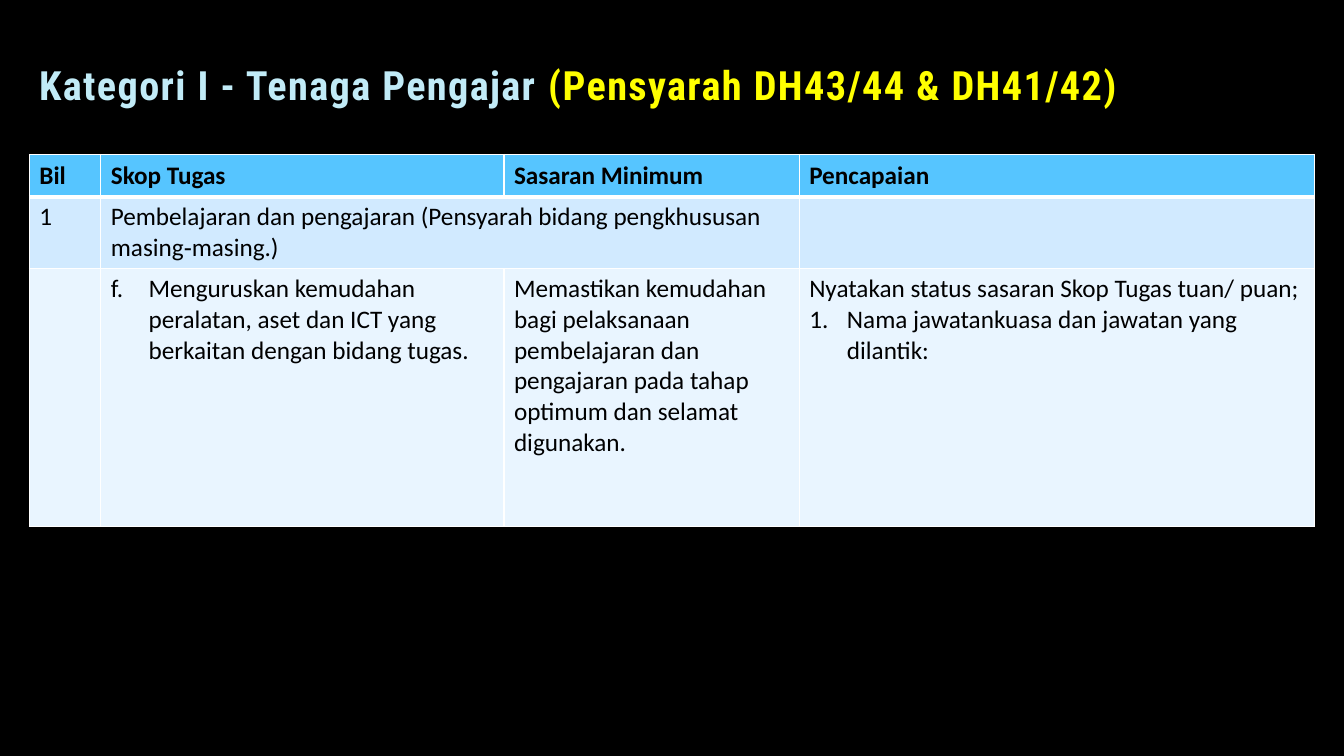
import dataclasses

import lxml.etree
import pptx
import pptx.dml.color
import pptx.enum.text
import pptx.oxml.ns
import pptx.util

Cm = pptx.util.Cm
Pt = pptx.util.Pt
qn = pptx.oxml.ns.qn
Anchor = pptx.enum.text.MSO_ANCHOR

WIDTHS = (1.8, 10.16, 7.44, 12.98)
HEIGHTS = (1.07, 1.78, 6.5)
FILLS = ("56C5FF", "D1EAFF", "E9F5FF")
INDENT = Cm(0.95)


@dataclasses.dataclass
class Line:
    text: str
    scheme: str = ""
    start: int = 1


ROWS = (
    ([Line("Bil")], [Line("Skop Tugas")], [Line("Sasaran Minimum")], [Line("Pencapaian")]),
    (
        [Line("1")],
        [Line("Pembelajaran dan pengajaran (Pensyarah bidang pengkhususan masing‐masing.)")],
        [],
        [],
    ),
    (
        [],
        [Line("Menguruskan kemudahan peralatan, aset dan ICT yang berkaitan dengan bidang tugas.",
              "alphaLcPeriod", 6)],
        [Line("Memastikan kemudahan bagi pelaksanaan pembelajaran dan pengajaran "
              "pada tahap optimum dan selamat digunakan.")],
        [Line("Nyatakan status sasaran Skop Tugas tuan/ puan;"),
         Line("Nama jawatankuasa dan jawatan yang dilantik:", "arabicPeriod")],
    ),
)


def color(code: str) -> pptx.dml.color.RGBColor:
    return pptx.dml.color.RGBColor.from_string(code)


def style(font, name: str, size: float, code: str, bold: bool) -> None:
    font.name = name
    font.size = Pt(size)
    font.bold = bold
    font.color.rgb = color(code)


def number(para, line: Line) -> None:
    """Give the paragraph a hanging automatic number."""
    props = para._p.get_or_add_pPr()
    props.set("marL", str(INDENT))
    props.set("indent", str(-INDENT))
    mark = lxml.etree.SubElement(props, qn("a:buAutoNum"), type=line.scheme)
    if line.start > 1:
        mark.set("startAt", str(line.start))


def border(cell, row: int) -> None:
    """Draw white cell edges, thick between the header and the body."""
    props = cell._tc.get_or_add_tcPr()
    thick = {(0, "lnB"), (1, "lnT")}
    for side in ("lnL", "lnR", "lnT", "lnB"):
        width = Pt(3 if (row, side) in thick else 1)
        edge = lxml.etree.SubElement(props, qn("a:" + side), w=str(width))
        fill = lxml.etree.SubElement(edge, qn("a:solidFill"))
        lxml.etree.SubElement(fill, qn("a:srgbClr"), val="FFFFFF")


def write(cell, lines: list[Line], bold: bool) -> None:
    frame = cell.text_frame
    frame.text = "\n".join(line.text for line in lines)
    for para, line in zip(frame.paragraphs, lines):
        if line.scheme:
            number(para, line)
        for run in para.runs:
            style(run.font, "Calibri", 18, "000000", bold)


def heading(slide) -> None:
    box = slide.shapes.add_textbox(Cm(0.74), Cm(1.19), Cm(28.88), Cm(1.7))
    frame = box.text_frame
    frame.word_wrap = True
    frame.vertical_anchor = Anchor.BOTTOM
    para = frame.paragraphs[0]
    para.line_spacing = 0.9
    for text, code in (
        ("Kategori I - Tenaga Pengajar ", "C1EBF7"),
        ("(Pensyarah DH43/44 & DH41/42)", "FFFF00"),
    ):
        run = para.add_run()
        run.text = text
        style(run.font, "Roboto Condensed", 28.8, code, True)
        run._r.get_or_add_rPr().set("spc", "100")


def grid(slide) -> None:
    frame = slide.shapes.add_table(
        len(ROWS), len(WIDTHS), Cm(0.74), Cm(3.89), Cm(sum(WIDTHS)), Cm(sum(HEIGHTS))
    )
    table = frame.table
    table.horz_banding = False
    for col, width in zip(table.columns, WIDTHS):
        col.width = Cm(width)
    for row, height in zip(table.rows, HEIGHTS):
        row.height = Cm(height)
    for i, cells in enumerate(ROWS):
        for j, lines in enumerate(cells):
            cell = table.cell(i, j)
            border(cell, i)
            cell.fill.solid()
            cell.fill.fore_color.rgb = color(FILLS[i])
            cell.vertical_anchor = Anchor.TOP if i else Anchor.MIDDLE
            write(cell, lines, i == 0)
    table.cell(1, 1).merge(table.cell(1, 2))


def main() -> None:
    deck = pptx.Presentation()
    deck.slide_width = Cm(33.87)
    deck.slide_height = Cm(19.05)
    slide = deck.slides.add_slide(deck.slide_layouts[6])
    slide.background.fill.solid()
    slide.background.fill.fore_color.rgb = color("000000")
    grid(slide)
    heading(slide)
    deck.save("out.pptx")


if __name__ == "__main__":
    main()
